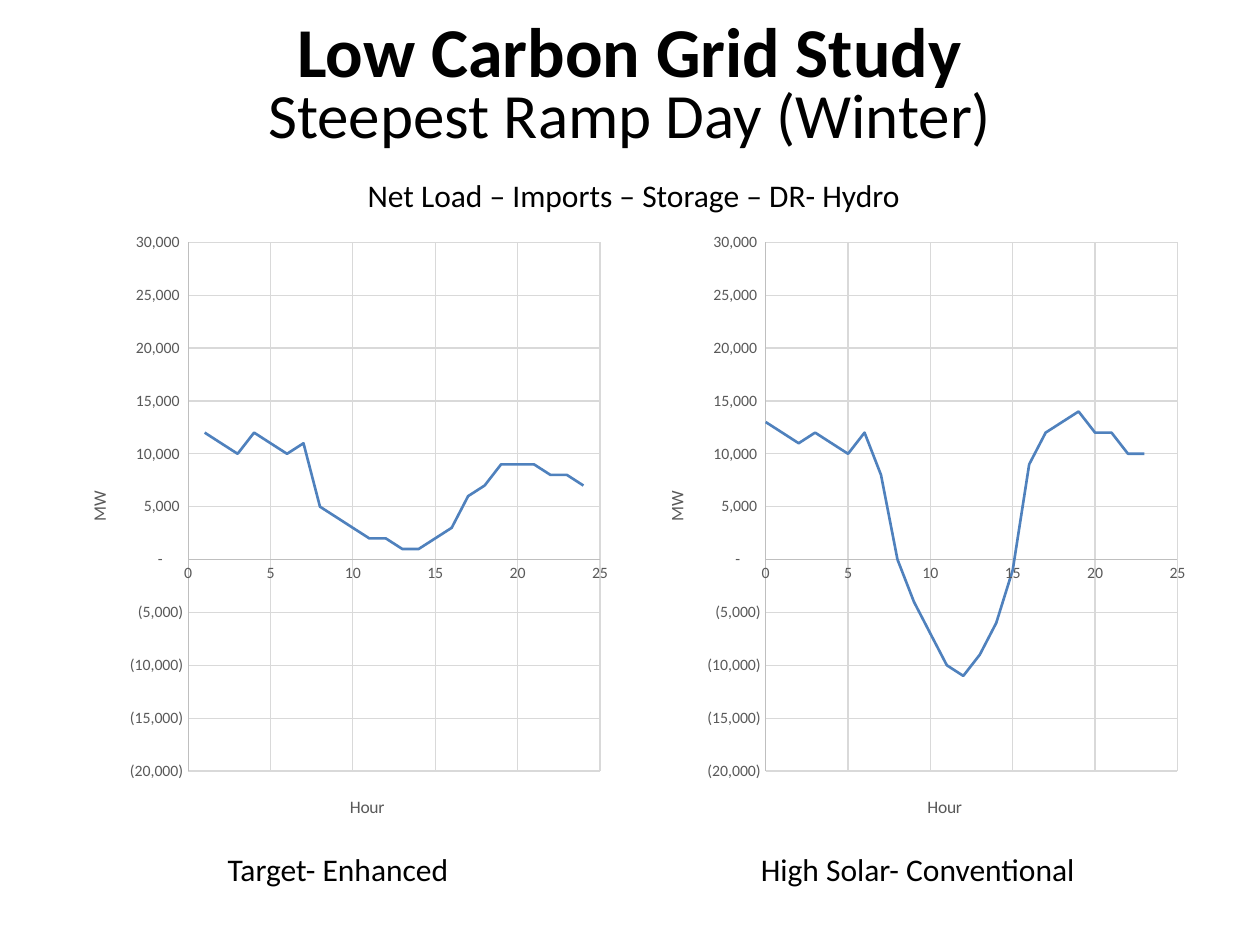
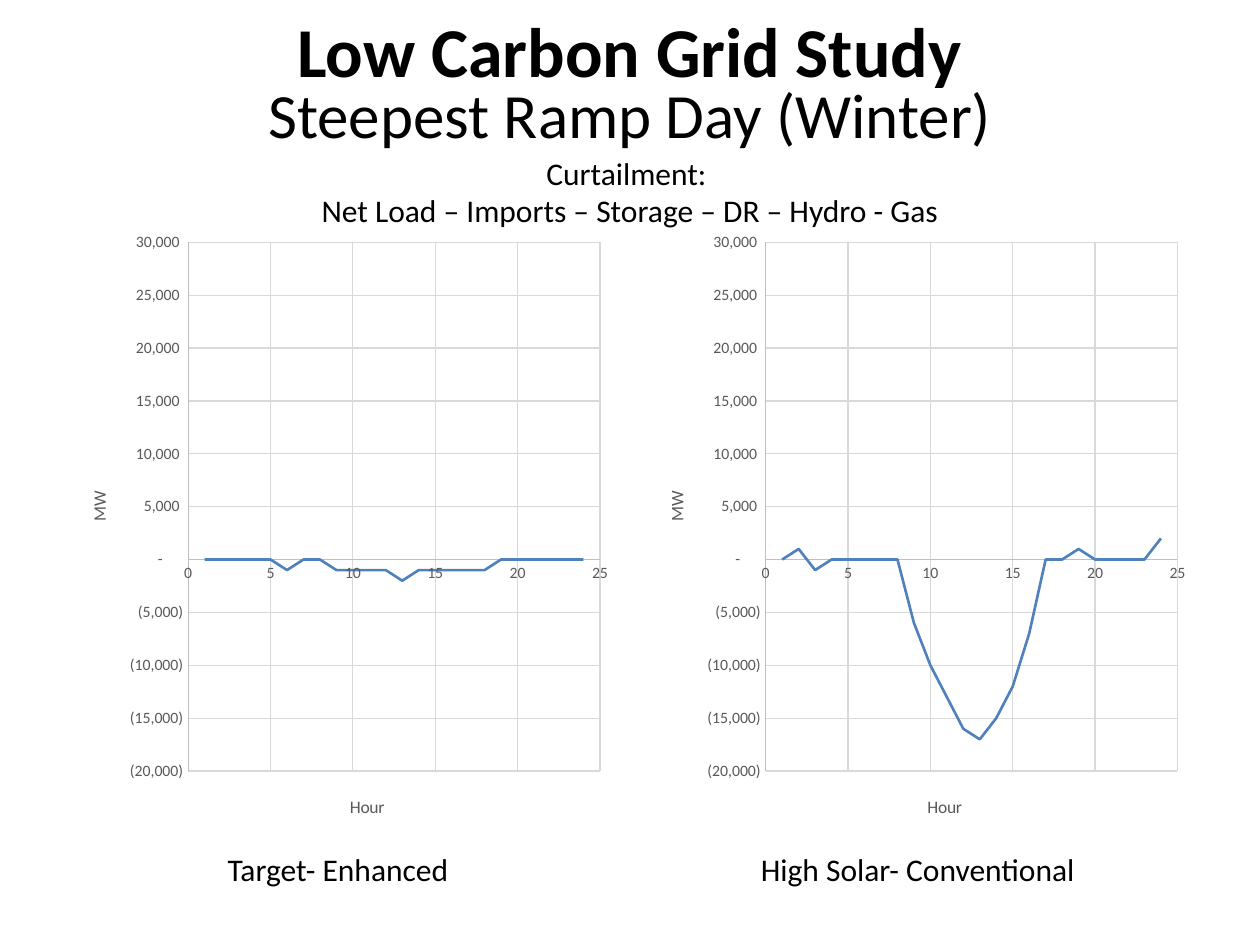
import pptx
import pptx.chart.data
import pptx.dml.color
import pptx.enum.chart
import pptx.enum.text
import pptx.util

Pt = pptx.util.Pt
ALIGN = pptx.enum.text.PP_ALIGN
COLORS = {"text": "000000", "label": "595959", "axis": "BFBFBF", "grid": "D9D9D9", "curve": "4F81BD"}
MEGAWATT_FORMAT = '_(* #,##0_);_(* \\(#,##0\\);_(* "-"??_);_(@_)'
HOUR_AXIS = {"minimum_scale": 0, "maximum_scale": 25, "major_unit": 5}
MEGAWATT_AXIS = {"minimum_scale": -20000, "maximum_scale": 30000, "major_unit": 5000}
TARGET_LEFT, SOLAR_LEFT = 36, 366

SLIDES = [
    {
        "subtitle": ["Net Load – Imports – Storage – DR- Hydro"],
        "subtitle_box": (203, 97.2, 325.5, 28.8),
        "subtitle_align": ALIGN.LEFT,
        "target": (1, [12, 11, 10, 12, 11, 10, 11, 5, 4, 3, 2, 2,
                       1, 1, 2, 3, 6, 7, 9, 9, 9, 8, 8, 7]),
        "solar": (0, [13, 12, 11, 12, 11, 10, 12, 8, 0, -4, -7, -10,
                      -11, -9, -6, -1, 9, 12, 13, 14, 12, 12, 10, 10]),
    },
    {
        "subtitle": ["Curtailment: ", "Net Load – Imports – Storage – DR – Hydro - Gas"],
        "subtitle_box": (169.2, 84.2, 381.6, 51),
        "subtitle_align": ALIGN.CENTER,
        "target": (1, [0, 0, 0, 0, 0, -1, 0, 0, -1, -1, -1, -1,
                       -2, -1, -1, -1, -1, -1, 0, 0, 0, 0, 0, 0]),
        "solar": (1, [0, 1, -1, 0, 0, 0, 0, 0, -6, -10, -13, -16,
                      -17, -15, -12, -7, 0, 0, 1, 0, 0, 0, 0, 2]),
    },
]


class StudyDeck:
    """Holds the shared style and the current slide of the grid study."""

    font_name = "Calibri"

    def __init__(self):
        self.presentation = pptx.Presentation()
        self.presentation.slide_width = Pt(720)
        self.presentation.slide_height = Pt(540)
        self.slide = None

    def new_slide(self):
        self.slide = self.presentation.slides.add_slide(self.presentation.slide_layouts[6])

    def apply(self, target, values):
        for name, value in values.items():
            setattr(target, name, value)

    def color(self, name):
        return pptx.dml.color.RGBColor.from_string(COLORS[name])

    def style_font(self, font, size, color="text", bold=False):
        self.apply(font, {"name": self.font_name, "size": Pt(size), "bold": bold})
        font.color.rgb = self.color(color)

    def style_line(self, line, color, width=0.75):
        line.width = Pt(width)
        line.color.rgb = self.color(color)

    def text(self, lines, box, size=18, align=ALIGN.LEFT, bold=False, shapes=None):
        shapes = shapes or self.slide.shapes
        frame = shapes.add_textbox(*map(Pt, box)).text_frame
        frame.word_wrap = True
        frame.text = "\n".join(lines)
        for paragraph in frame.paragraphs:
            paragraph.alignment = align
            self.style_font(paragraph.runs[0].font, size, bold=bold)

    def title(self):
        shapes = self.slide.shapes.add_group_shape().shapes
        self.text(["Steepest Ramp Day (Winter)"], (78.5, 39.6, 563, 51), 36, ALIGN.CENTER, shapes=shapes)
        self.text(["Low Carbon Grid Study"], (121, 0.7, 477.4, 55.4), 40, ALIGN.CENTER, True, shapes)

    def axis(self, axis, title, number_format, scale):
        self.apply(axis, scale)
        self.apply(axis, {
            "has_major_gridlines": True,
            "major_tick_mark": pptx.enum.chart.XL_TICK_MARK.NONE,
            "minor_tick_mark": pptx.enum.chart.XL_TICK_MARK.NONE,
            "tick_label_position": pptx.enum.chart.XL_TICK_LABEL_POSITION.NEXT_TO_AXIS,
        })
        self.apply(axis.tick_labels, {"number_format": number_format, "number_format_is_linked": False})
        self.style_font(axis.tick_labels.font, 9, "label")
        self.style_line(axis.format.line, "axis")
        self.style_line(axis.major_gridlines.format.line, "grid")
        frame = axis.axis_title.text_frame
        frame.text = title
        self.style_font(frame.paragraphs[0].runs[0].font, 10, "label")

    def plot_area_layout(self, chart):
        layout = pptx.oxml.parse_xml(
            '<c:layout xmlns:c="http://schemas.openxmlformats.org/drawingml/2006/chart">'
            '<c:manualLayout><c:layoutTarget val="inner"/><c:xMode val="edge"/><c:yMode val="edge"/>'
            '<c:x val="0.225"/><c:y val="0.035"/><c:w val="0.74"/><c:h val="0.848"/>'
            '</c:manualLayout></c:layout>')
        plot_area = chart.element.chart.plotArea
        for old_layout in plot_area.xpath("c:layout"):
            plot_area.remove(old_layout)
        plot_area.insert(0, layout)

    def load_chart(self, left, first_hour, gigawatts):
        data = pptx.chart.data.XyChartData()
        points = data.add_series("Series 1")
        for hour, gigawatt in enumerate(gigawatts, first_hour):
            points.add_data_point(hour, gigawatt * 1000)
        chart = self.slide.shapes.add_chart(
            pptx.enum.chart.XL_CHART_TYPE.XY_SCATTER_SMOOTH_NO_MARKERS,
            Pt(left), Pt(126), Pt(318), Pt(356.4), data).chart
        self.apply(chart, {"has_legend": False, "has_title": False})
        self.style_font(chart.font, 10)
        chart.plots[0].vary_by_categories = False
        series = chart.plots[0].series[0]
        series.smooth = True
        self.style_line(series.format.line, "curve", 1.5)
        self.axis(chart.category_axis, "Hour", "General", HOUR_AXIS)
        self.axis(chart.value_axis, "MW", MEGAWATT_FORMAT, MEGAWATT_AXIS)
        self.plot_area_layout(chart)


def main():
    deck = StudyDeck()
    for content in SLIDES:
        deck.new_slide()
        deck.text(["Target- Enhanced"], (123, 482.4, 146, 28.8))
        deck.text(["High Solar- Conventional"], (427.7, 482.4, 197, 28.8))
        deck.text(content["subtitle"], content["subtitle_box"], align=content["subtitle_align"])
        deck.title()
        deck.load_chart(TARGET_LEFT, *content["target"])
        deck.load_chart(SOLAR_LEFT, *content["solar"])
    deck.presentation.save("out.pptx")


if __name__ == "__main__":
    main()
